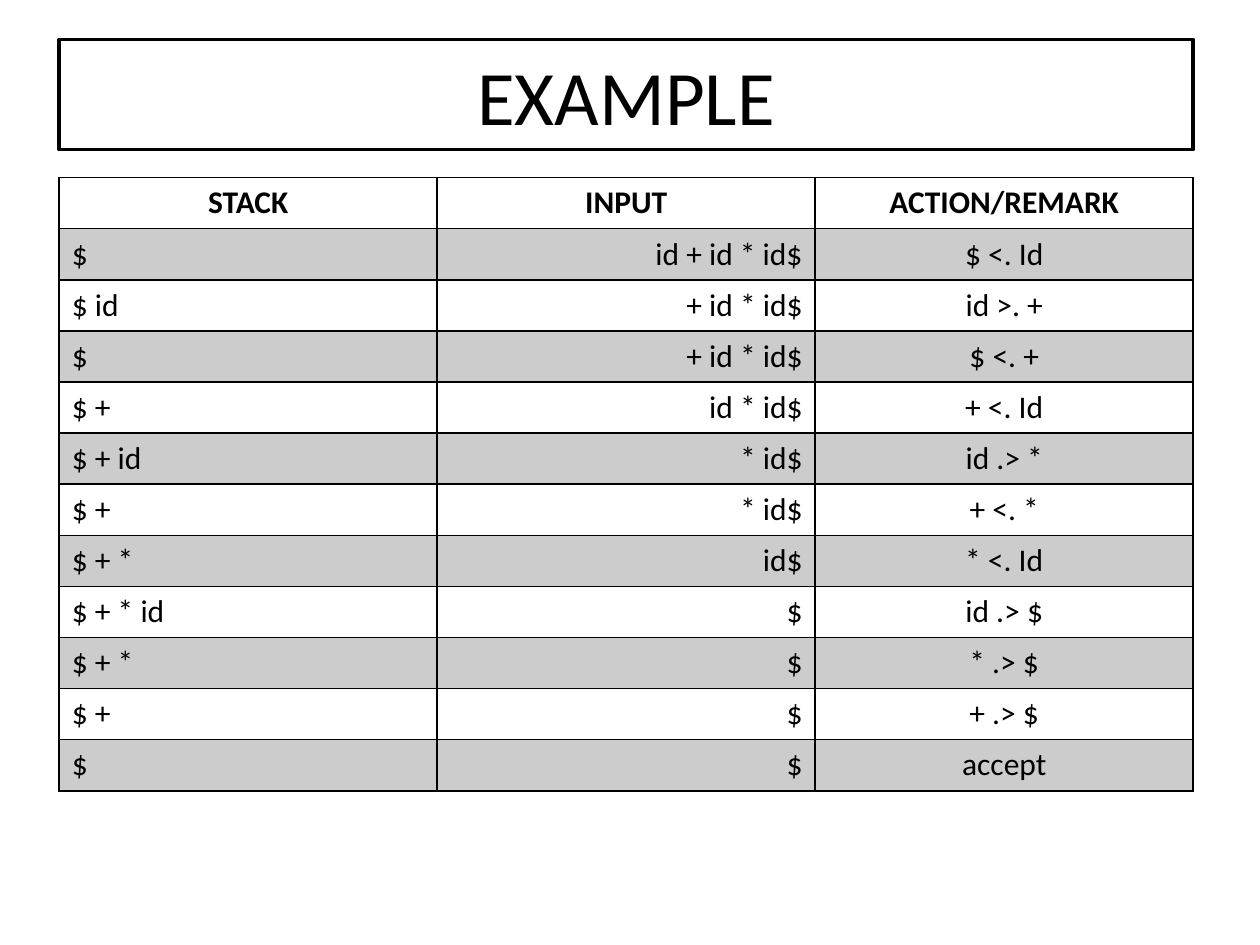
"""Build a slide that traces an operator precedence parse."""
from dataclasses import dataclass

from lxml import etree
from pptx import Presentation
from pptx.dml.color import RGBColor
from pptx.enum.text import MSO_ANCHOR, PP_ALIGN
from pptx.oxml.ns import qn
from pptx.util import Pt

LEFT, MID, RIGHT = PP_ALIGN.LEFT, PP_ALIGN.CENTER, PP_ALIGN.RIGHT
CENTRE = MSO_ANCHOR.MIDDLE
BLACK = RGBColor(0, 0, 0)
WHITE = RGBColor(255, 255, 255)
FONT = "Calibri"
EDGE, WIDTH = Pt(33.84), Pt(648)
ROW = Pt(29.2)
ALIGNS = (LEFT, RIGHT, MID)
HEADS = ("STACK", "INPUT", "ACTION/REMARK")


@dataclass
class Step:
    stack: str
    rest: str
    action: str


STEPS = [
    Step("$", "id + id * id$", "$ <. Id"),
    Step("$ id", "+ id * id$", "id >. +"),
    Step("$", "+ id * id$", "$ <. +"),
    Step("$ +", "id * id$", "+ <. Id"),
    Step("$ + id", "* id$", "id .> *"),
    Step("$ +", "* id$", "+ <. *"),
    Step("$ + *", "id$", "* <. Id"),
    Step("$ + * id", "$", "id .> $"),
    Step("$ + *", "$", "* .> $"),
    Step("$ +", "$", "+ .> $"),
    Step("$", "$", "accept"),
]


def write(frame, text: str, size: float, align, bold: bool = False) -> None:
    """Set and format one line of text."""
    frame.text = text
    para = frame.paragraphs[0]
    para.alignment = align
    font = para.runs[0].font
    font.name, font.size, font.bold = FONT, Pt(size), bold
    font.color.rgb = BLACK


def border(cell) -> None:
    """Rule all four sides of a cell."""
    props = cell._tc.get_or_add_tcPr()
    for side in ("a:lnL", "a:lnR", "a:lnT", "a:lnB"):
        line = etree.SubElement(props, qn(side), w=str(Pt(1)))
        fill = etree.SubElement(line, qn("a:solidFill"))
        etree.SubElement(fill, qn("a:srgbClr"), val=str(BLACK))


def shade(cell) -> None:
    """Fill a cell with black at one fifth strength."""
    cell.fill.solid()
    cell.fill.fore_color.rgb = BLACK
    tint = cell._tc.tcPr.find(qn("a:solidFill")).find(qn("a:srgbClr"))
    etree.SubElement(tint, qn("a:alpha"), val="20000")


def draw_title(slide, text: str) -> None:
    """Place the framed title."""
    title = slide.shapes.title
    title.left, title.top, title.width, title.height = EDGE, Pt(22.5), WIDTH, Pt(63)
    title.fill.solid()
    title.fill.fore_color.rgb = WHITE
    title.line.color.rgb = BLACK
    title.line.width = Pt(2)
    write(title.text_frame, text, 44, MID)
    title.text_frame.vertical_anchor = CENTRE


def draw_row(table, index: int, texts: tuple, aligns: tuple) -> None:
    """Fill one table row, with every second row shaded."""
    table.rows[index].height = ROW
    for cell, text, align in zip(table.rows[index].cells, texts, aligns):
        write(cell.text_frame, text, 18, align, index == 0)
        border(cell)
        if index % 2:
            shade(cell)
        else:
            cell.fill.background()


def draw_table(slide, steps: list[Step]) -> None:
    """Draw the heads and the steps of the parse."""
    count = len(steps) + 1
    frame = slide.shapes.add_table(count, len(HEADS), EDGE, Pt(101.5), WIDTH, ROW * count)
    table = frame.table
    table.first_row = table.horz_banding = False
    draw_row(table, 0, HEADS, (MID,) * len(HEADS))
    for index, step in enumerate(steps, 1):
        draw_row(table, index, (step.stack, step.rest, step.action), ALIGNS)


def main() -> None:
    """Make and save the deck."""
    deck = Presentation()
    deck.slide_width, deck.slide_height = Pt(720), Pt(540)
    slide = deck.slides.add_slide(deck.slide_layouts.get_by_name("Title Only"))
    draw_title(slide, "EXAMPLE")
    draw_table(slide, STEPS)
    deck.save("out.pptx")


if __name__ == "__main__":
    main()
